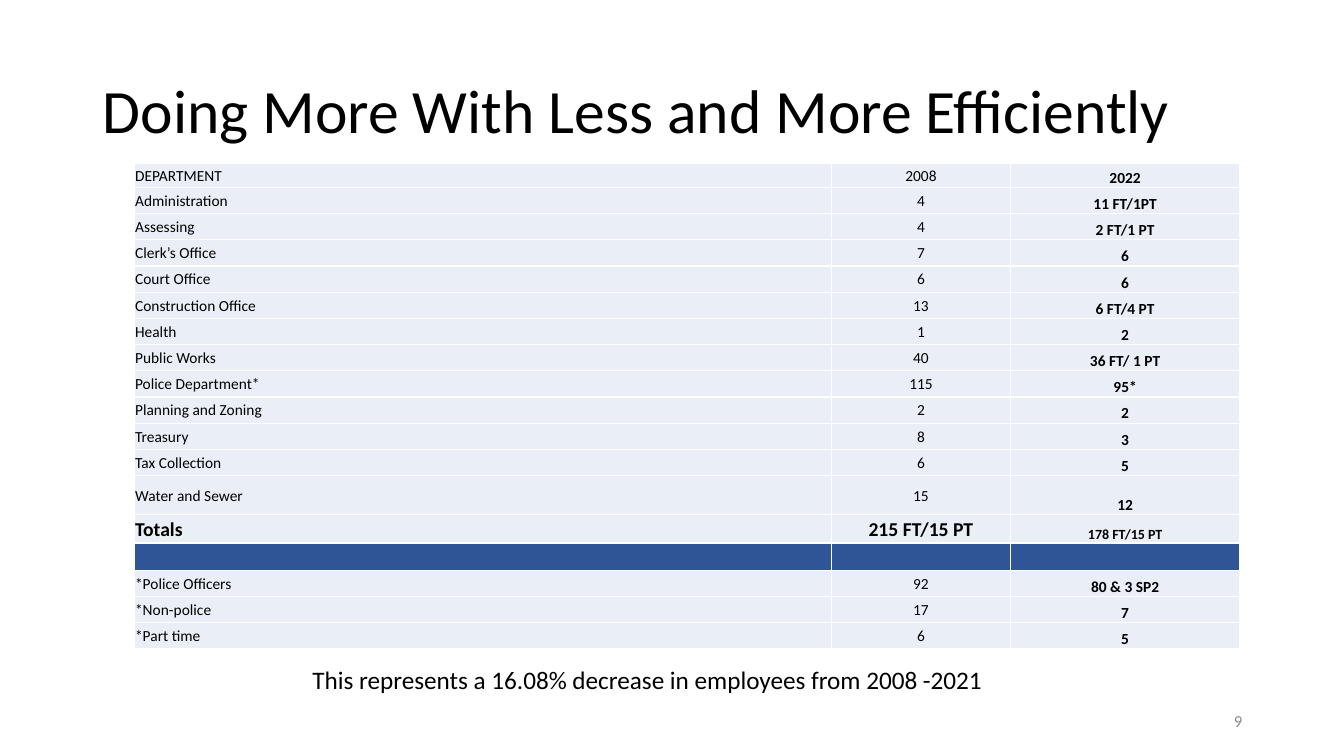
from lxml.etree import SubElement
from pptx import Presentation
from pptx.dml.color import RGBColor
from pptx.enum.text import MSO_ANCHOR as ANCHOR, MSO_AUTO_SIZE as AUTO_SIZE, PP_ALIGN as ALIGN
from pptx.oxml.ns import qn
from pptx.util import Inches, Pt

FONT = "Calibri"
COLORS = {
    "text": "000000",
    "muted": "8C8C8C",
    "row": "EAEFF7",
    "divider": "2F5597",
    "border": "FFFFFF",
}

COLUMN_WIDTHS = [6.92, 1.77, 2.28]
COLUMN_ALIGNS = [ALIGN.LEFT, ALIGN.CENTER, ALIGN.CENTER]
COLUMN_ANCHORS = [ANCHOR.MIDDLE, ANCHOR.MIDDLE, ANCHOR.BOTTOM]

STAFFING = [
    ("DEPARTMENT", "2008", "2022"),
    ("Administration", "4", "11 FT/1PT"),
    ("Assessing", "4", "2 FT/1 PT"),
    ("Clerk’s Office", "7", "6"),
    ("Court Office", "6", "6"),
    ("Construction Office", "13", "6 FT/4 PT"),
    ("Health", "1", "2"),
    ("Public Works", "40", "36 FT/ 1 PT"),
    ("Police Department*", "115", "95*"),
    ("Planning and Zoning", "2", "2"),
    ("Treasury", "8", "3"),
    ("Tax Collection", "6", "5"),
    ("Water and Sewer", "15", "12"),
    ("Totals", "215 FT/15 PT", "178 FT/15 PT"),
    ("", "", ""),
    ("*Police Officers", "92", "80 & 3 SP2"),
    ("*Non-police", "17", "7"),
    ("*Part time", "6", "5"),
]
ROW_HEIGHT = 0.26
SPECIAL_HEIGHTS = {"DEPARTMENT": 0.24, "Water and Sewer": 0.39, "Totals": 0.28, "": 0.27}


def color(name):
    return RGBColor.from_string(COLORS[name])


def format_paragraph(paragraph, size, align=ALIGN.LEFT, bold=False, tone="text"):
    paragraph.alignment = align
    font = paragraph.font
    font.name = FONT
    font.size = Pt(size)
    font.bold = bold
    font.color.rgb = color(tone)


def add_title(slide, text):
    title = slide.shapes.title
    title.left, title.top = Inches(0.92), Inches(0.4)
    title.width, title.height = Inches(11.5), Inches(1.45)
    frame = title.text_frame
    frame.text = text
    frame.auto_size = AUTO_SIZE.NONE
    frame.vertical_anchor = ANCHOR.MIDDLE
    format_paragraph(frame.paragraphs[0], 44)
    frame.paragraphs[0].line_spacing = 0.9


def add_label(slide, text, left, top, width, size, **style):
    label = slide.shapes.add_textbox(Inches(left), Inches(top), Inches(width), Inches(0.4))
    frame = label.text_frame
    frame.text = text
    frame.word_wrap = True
    format_paragraph(frame.paragraphs[0], size, **style)
    return frame


def add_borders(cell):
    properties = cell._tc.get_or_add_tcPr()
    for side in ("lnL", "lnR", "lnT", "lnB"):
        line = SubElement(properties, qn(f"a:{side}"), w=str(Pt(1)))
        fill = SubElement(line, qn("a:solidFill"))
        SubElement(fill, qn("a:srgbClr"), val=COLORS["border"])


def fill_cell(cell, text, column, is_total, is_divider):
    cell.margin_left = cell.margin_right = cell.margin_top = Inches(0.01)
    cell.margin_bottom = 0
    cell.vertical_anchor = COLUMN_ANCHORS[column]
    add_borders(cell)
    cell.fill.solid()
    cell.fill.fore_color.rgb = color("divider" if is_divider else "row")

    is_latest = column == 2
    size = (10 if is_latest else 14) if is_total else 11
    if not is_divider:
        cell.text = text
    paragraph = cell.text_frame.paragraphs[0]
    format_paragraph(paragraph, size, COLUMN_ALIGNS[column], bold=is_total or is_latest)
    if is_divider:
        # Keeps the empty row from growing to the default text size
        SubElement(paragraph._p, qn("a:endParaRPr"), sz=str(size * 100))


def add_staffing_table(slide):
    heights = [SPECIAL_HEIGHTS.get(row[0], ROW_HEIGHT) for row in STAFFING]
    table = slide.shapes.add_table(
        len(STAFFING), len(COLUMN_WIDTHS), Inches(1.33), Inches(1.62),
        Inches(sum(COLUMN_WIDTHS)), Inches(sum(heights)),
    ).table
    table.first_row = table.horz_banding = False
    for column, width in zip(table.columns, COLUMN_WIDTHS):
        column.width = Inches(width)
    for index, (values, height) in enumerate(zip(STAFFING, heights)):
        table.rows[index].height = Inches(height)
        department = values[0]
        for column, text in enumerate(values):
            fill_cell(table.cell(index, column), text, column,
                      department == "Totals", department == "")


def main():
    deck = Presentation()
    deck.slide_width, deck.slide_height = Inches(13.33), Inches(7.5)
    slide = deck.slides.add_slide(deck.slide_layouts[5])

    # Title
    add_title(slide, "Doing More With Less and More Efficiently")

    # Page number
    page_number = add_label(slide, "9", 9.42, 6.95, 3, 12, align=ALIGN.RIGHT, tone="muted")
    page_number.vertical_anchor = ANCHOR.MIDDLE

    # Conclusion below the table
    conclusion = add_label(
        slide, "This represents a 16.08% decrease in employees from 2008 -2021", 3, 6.54, 6.93, 18)
    conclusion.word_wrap = False
    conclusion.auto_size = AUTO_SIZE.SHAPE_TO_FIT_TEXT

    # Staffing by department
    add_staffing_table(slide)

    deck.save("out.pptx")


if __name__ == "__main__":
    main()
